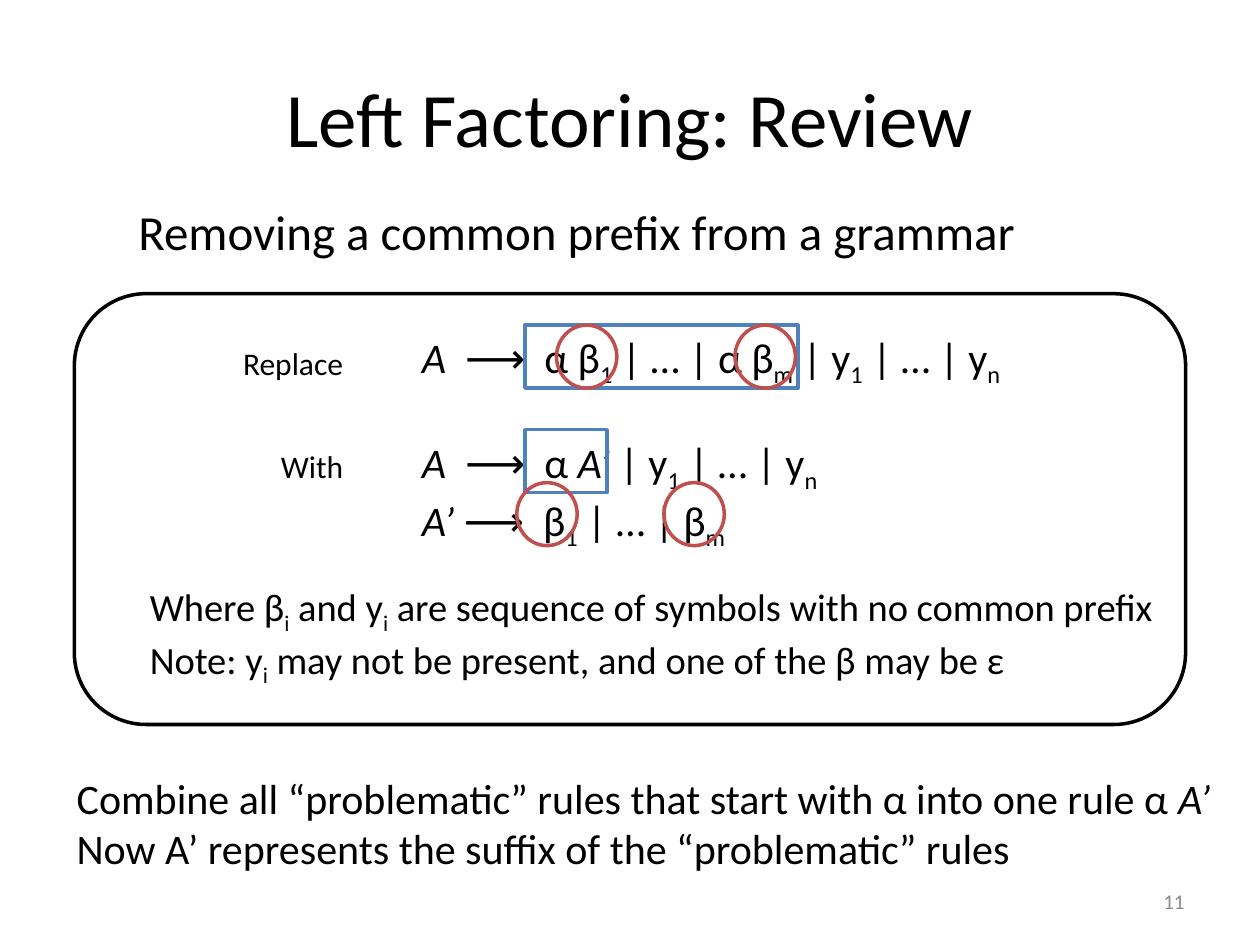
from typing import NamedTuple

from pptx import Presentation
from pptx import util as u
from pptx.dml.color import RGBColor
from pptx.enum import shapes, text

Pt = u.Pt
FONT = "Calibri"
BLACK, WHITE, GREY, BLUE, RED = "000000", "FFFFFF", "8C8C8C", "4F81BD", "C0504D"
MARK_H = 36  # height of every highlight
RING_W = 34.5
ROW_1, ROW_2, ROW_3 = 185.8, 245.6, 275.8  # tops of the highlights, one per rule


class Mark(NamedTuple):
    """A highlight around part of a rule."""
    kind: shapes.MSO_SHAPE
    left: float
    top: float
    width: float
    color: str


def prefix_box(left: float, top: float, width: float) -> Mark:
    return Mark(shapes.MSO_SHAPE.RECTANGLE, left, top, width, BLUE)


def suffix_ring(left: float, top: float) -> Mark:
    return Mark(shapes.MSO_SHAPE.OVAL, left, top, RING_W, RED)


def rgb(value: str) -> RGBColor:
    return RGBColor.from_string(value)


def add_outline(s, kind, left, top, width, height, color, fill=None):
    sp = s.shapes.add_shape(kind, Pt(left), Pt(top), Pt(width), Pt(height))
    sp.shadow.inherit = False
    if fill:
        sp.fill.solid()
        sp.fill.fore_color.rgb = rgb(fill)
    else:
        sp.fill.background()
    sp.line.color.rgb = rgb(color)
    sp.line.width = Pt(2)


def add_mark(s, mark: Mark) -> None:
    add_outline(s, mark.kind, mark.left, mark.top, mark.width, MARK_H, mark.color)


def add_runs(p, line: str, size: float, color: str) -> None:
    """Write a line in which *...* is italic and ~...~ is subscript."""
    for i, styled in enumerate(line.split("*")):
        for j, part in enumerate(styled.split("~")):
            if not part:
                continue
            r = p.add_run()
            r.text = part
            r.font.name, r.font.size = FONT, Pt(size)
            r.font.color.rgb = rgb(color)
            if i % 2:
                r.font.italic = True
            if j % 2:
                r.font._element.set("baseline", "-25000")


def add_text(s, content: str, left, top, width, height, *, size=24, color=BLACK,
             align=text.PP_ALIGN.LEFT, anchor=text.MSO_ANCHOR.TOP,
             wrap=True, indent=0) -> None:
    tf = s.shapes.add_textbox(Pt(left), Pt(top), Pt(width), Pt(height)).text_frame
    tf.word_wrap = wrap
    tf.vertical_anchor = anchor
    for n, line in enumerate(content.split("\n")):
        p = tf.add_paragraph() if n else tf.paragraphs[0]
        p.alignment = align
        if indent:
            p.level = 1
            pPr = p._p.get_or_add_pPr()
            pPr.set("marL", str(Pt(indent)))
            pPr.set("indent", "0")
        add_runs(p, line, size, color)


def main() -> None:
    prs = Presentation()
    prs.slide_width, prs.slide_height = Pt(720), Pt(540)
    s = prs.slides.add_slide(prs.slide_layouts[6])
    middle = text.MSO_ANCHOR.MIDDLE

    add_outline(s, shapes.MSO_SHAPE.ROUNDED_RECTANGLE, 42.5, 167.8, 635, 246.2,
                BLACK, WHITE)
    add_mark(s, prefix_box(300, ROW_1, 156))

    add_text(s, "Left Factoring: Review", 24, 21.6, 672, 90, size=44,
             align=text.PP_ALIGN.CENTER, anchor=middle)
    add_text(s, "Removing a common prefix from a grammar", 36, 111.6, 666, 356.4,
             size=28, indent=36)
    add_text(s, "11", 516, 500.4, 168, 28.8, size=12, color=GREY,
             align=text.PP_ALIGN.RIGHT, anchor=middle)

    add_text(s, "Replace", 131.8, 193, 72.7, 28.8, size=18, wrap=False)
    add_text(s, "*A*  ⟶  α β~1~ | … | α β~m~ | y~1~ | … | y~n~",
             234, ROW_1, 354, 36)
    add_text(s, "With", 153.4, 252, 50.4, 28.8, size=18, wrap=False)
    add_text(s, "*A*  ⟶  α *A’* | y~1~ | … | y~n~\n*A’* ⟶  β~1~ | … | β~m~",
             234, 246, 294, 65.5)
    add_text(s, "Where β~i~ and y~i~ are sequence of symbols with no common prefix\n"
                "Note: y~i~ may not be present, and one of the β may be ε",
             42.5, 329.8, 635, 60.5, size=22, wrap=False, indent=36)
    add_text(s, "Combine all “problematic” rules that start with α into one rule α *A’*\n"
                "Now A’ represents the suffix of the “problematic” rules",
             0.7, 437.8, 718.6, 65.5, wrap=False, indent=36)

    for mark in (suffix_ring(318, ROW_1), suffix_ring(420, ROW_1),
                 prefix_box(300, ROW_2, 46.8),
                 suffix_ring(295.3, ROW_3), suffix_ring(379.4, ROW_3)):
        add_mark(s, mark)

    prs.save("out.pptx")


if __name__ == "__main__":
    main()
